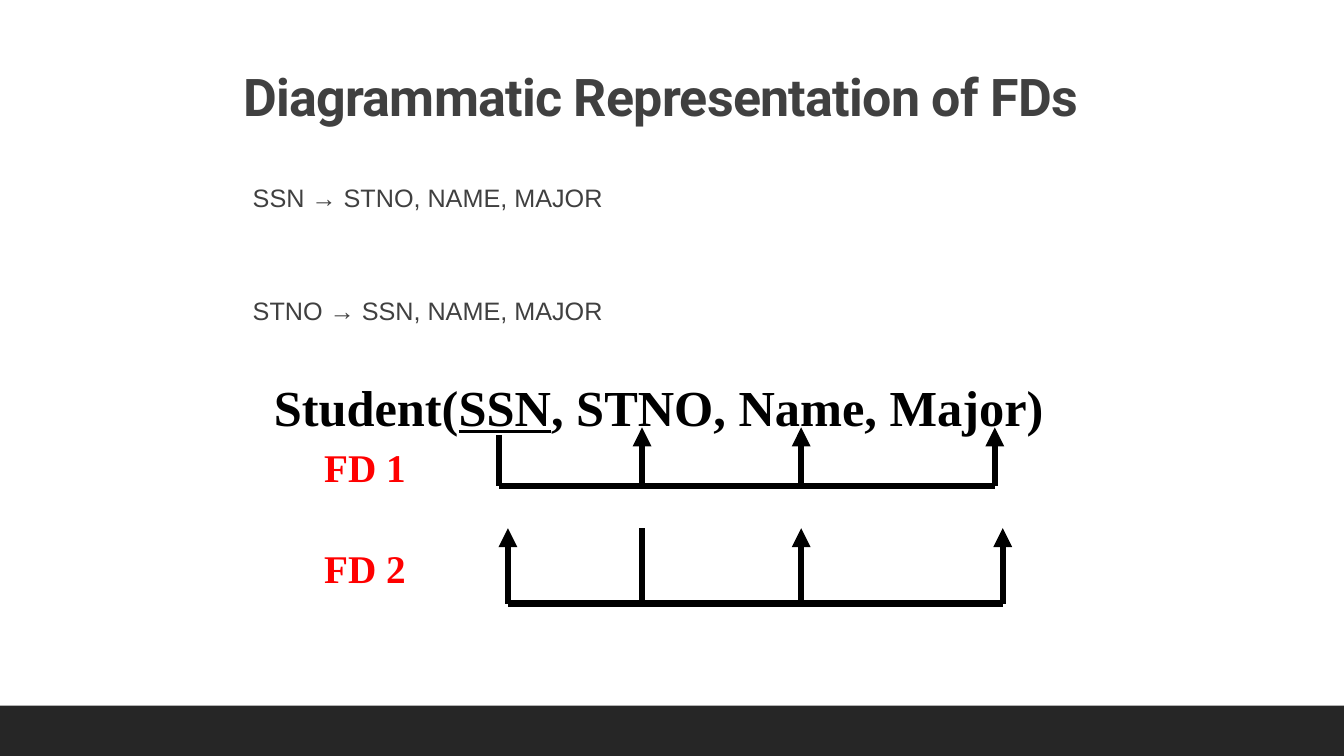
from lxml import etree
from pptx import Presentation
from pptx.dml.color import RGBColor
from pptx.enum import shapes, text
from pptx.oxml.ns import qn
from pptx.util import Cm, Pt

BLACK = RGBColor(0x00, 0x00, 0x00)
RED = RGBColor(0xFF, 0x00, 0x00)
GREY = RGBColor(0x40, 0x40, 0x40)
BAND = RGBColor(0x26, 0x26, 0x26)

deck = Presentation()
deck.slide_width, deck.slide_height = Cm(33.87), Cm(19.05)
slide = deck.slides.add_slide(deck.slide_layouts[5])


def add_text(left, top, width, height, paragraphs, font, size, color, bold):
    box = slide.shapes.add_textbox(Cm(left), Cm(top), Cm(width), Cm(height))
    frame = box.text_frame
    frame.word_wrap = True
    frame.text = "\n".join(paragraphs)
    for paragraph in frame.paragraphs:
        paragraph.font.name = font
        paragraph.font.size = Pt(size)
        paragraph.font.bold = bold
        paragraph.font.color.rgb = color
    return frame


def add_line(x1, y1, x2, y2, arrow=False):
    line = slide.shapes.add_connector(
        shapes.MSO_CONNECTOR.STRAIGHT, Cm(x1), Cm(y1), Cm(x2), Cm(y2))
    line.line.color.rgb = BLACK
    line.line.width = Pt(4.5)
    if arrow:
        etree.SubElement(line.line._get_or_add_ln(), qn("a:tailEnd"), type="triangle")
    etree.SubElement(line._element.spPr, qn("a:effectLst"))


band = slide.shapes.add_shape(
    shapes.MSO_SHAPE.RECTANGLE, 0, Cm(17.78), deck.slide_width, Cm(1.27))
band.shadow.inherit = False
band.fill.solid()
band.fill.fore_color.rgb = BAND
band.line.fill.background()

title = slide.shapes.title
title.left, title.top, title.width, title.height = Cm(5.87), Cm(1.83), Cm(21.89), Cm(1.45)
title.text_frame.text = "Diagrammatic Representation of FDs"
title.text_frame.auto_size = text.MSO_AUTO_SIZE.NONE
title.text_frame.vertical_anchor = text.MSO_ANCHOR.BOTTOM
heading = title.text_frame.paragraphs[0]
heading.alignment = text.PP_ALIGN.LEFT
heading.line_spacing = 0.7
heading.font.name = "Roboto"
heading.font.size = Pt(37.1)
heading.font.bold = True
heading.font.color.rgb = GREY
heading.runs[0].font._element.set("spc", "-50")

dependencies = add_text(
    5.87, 4.32, 21.89, 10.08,
    ["SSN → STNO, NAME, MAJOR", "STNO → SSN, NAME, MAJOR"],
    "Arial", 18, GREY, False)
for dependency in dependencies.paragraphs:
    dependency.line_spacing = 1.2
    dependency.space_after = Pt(2)
    dependency._p.get_or_add_pPr().set("marL", str(Cm(0.25)))
dependencies.paragraphs[1].space_before = Pt(53)

relation = add_text(6.65, 9.27, 21.79, 1.78, ["Student("],
                    "Times New Roman", 36, BLACK, True)
relation.margin_top = Cm(0.2)
schema = relation.paragraphs[0]
key = schema.add_run()
key.text = "SSN"
key.font.underline = True
schema.add_run().text = ", STNO, Name, Major)"

diagrams = [
    ("FD 1", 10.97, 12.24, 10.77, 10.97, 12.57, [16.18, 20.19, 25.07]),
    ("FD 2", 13.51, 15.21, 13.31, 13.31, 16.18, [12.8, 20.19, 25.27]),
]
for label, label_top, base, tip, source_top, source, targets in diagrams:
    name = add_text(7.92, label_top, 2.74, 1.45, [label],
                    "Times New Roman", 28, RED, True)
    name.margin_top = Cm(0.2)
    add_line(source, base, source, source_top)
    add_line(min(source, *targets), base, max(targets), base)
    for target in targets:
        add_line(target, base, target, tip, arrow=True)

deck.save("out.pptx")
